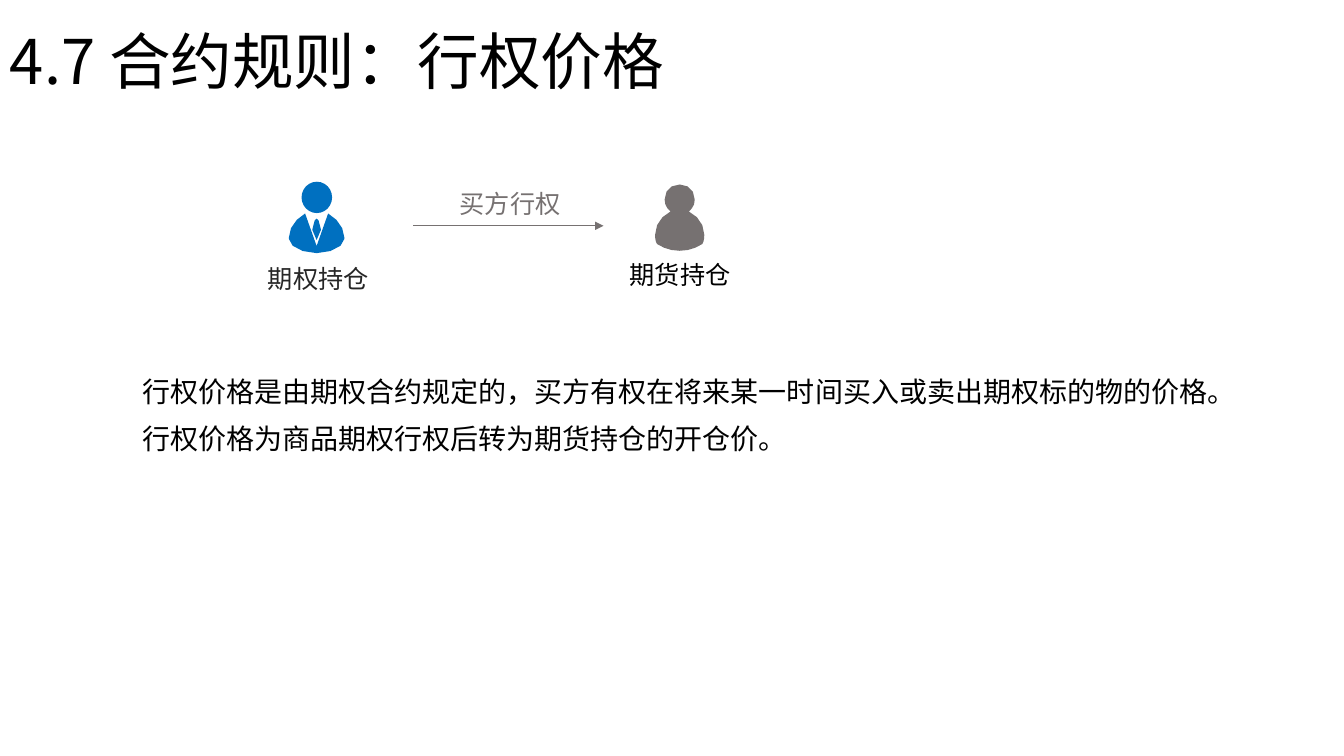
from dataclasses import dataclass
from lxml.etree import SubElement
from pptx import Presentation
from pptx.dml.color import RGBColor as RGB
from pptx.enum.shapes import MSO_CONNECTOR as CONN, MSO_SHAPE as SHAPE
from pptx.enum.text import PP_ALIGN as ALIGN
from pptx.oxml.ns import qn
from pptx.util import Cm, Pt


@dataclass(frozen=True)
class Theme:
    sans: str = "Noto Sans CJK SC"
    latin: str = "Calibri"
    black: RGB = RGB(0, 0, 0)
    dark: RGB = RGB(0x26, 0x26, 0x26)
    gray: RGB = RGB(0x76, 0x71, 0x71)
    blue: RGB = RGB(0x00, 0x70, 0xC0)
    title: Pt = Pt(44)
    body: Pt = Pt(20)
    label: Pt = Pt(18)


T = Theme()
STEPS = 3  # straight pieces per curve


def add_text(shapes, box, lines, size, color, font, wrap=True):
    """Text box with one paragraph per line; box is in centimetres."""
    tf = shapes.add_textbox(*map(Cm, box)).text_frame
    tf.word_wrap = wrap
    for i, line in enumerate(lines):
        p = tf.add_paragraph() if i else tf.paragraphs[0]
        p.add_run().text = line
        p.font.size, p.font.name, p.font.color.rgb = size, font, color
    return tf


def add_symmetric(shapes, axis, half):
    """Outline mirrored about x = axis; half lists points and cubic curves."""
    points = [half[0]]
    for seg in half[1:]:
        if len(seg) == 2:
            points.append(seg)
            continue
        x0, y0 = points[-1]
        x1, y1, x2, y2, x3, y3 = seg
        for t in (n / STEPS for n in range(1, STEPS + 1)):
            a, b, c, d = (1 - t) ** 3, 3 * t * (1 - t) ** 2, 3 * t * t * (1 - t), t ** 3
            points.append((a * x0 + b * x1 + c * x2 + d * x3,
                           a * y0 + b * y1 + c * y2 + d * y3))
    points += [(-x, y) for x, y in points[-2:0:-1]]
    outline = [(Cm(axis + x), Cm(y)) for x, y in points]
    fb = shapes.build_freeform(*outline[0])
    fb.add_line_segments(outline[1:], close=True)
    return fb.convert_to_shape()


prs = Presentation()
prs.slide_width, prs.slide_height = Cm(33.87), Cm(19.05)
s = prs.slides.add_slide(prs.slide_layouts[6])

# Body
tf = add_text(s.shapes, (3.33, 9.3, 27.43, 5.54), [
    "行权价格是由期权合约规定的，买方有权在将来某一时间买入或卖出期权标的物的价格。",
    "行权价格为商品期权行权后转为期货持仓的开仓价。",
], T.body, T.black, T.sans)
for p in tf.paragraphs:
    p.space_before = Pt(10)

# Title
tf = add_text(s.shapes, (0, 0.66, 28.55, 1.96), ["4.7 合约规则："], T.title, T.black, T.sans)
p = tf.paragraphs[0]
p.line_spacing = 0.9
r = p.add_run()
r.text = "行权价格"
r.font.name = T.latin

# Option holder: head, suit, tie
option = s.shapes.add_group_shape().shapes
suit = [(0, 6.2), (0.29, 5.38), (0.52, 5.51, 0.7, 5.74, 0.7, 5.99), (0.7, 6.02),
        (0.7, 6.2, 0.38, 6.38, 0, 6.38)]
tie = [(0, 5.51), (0.05, 5.56), (0.11, 5.79), (0, 6.05)]
head = option.add_shape(SHAPE.OVAL, Cm(7.6), Cm(4.58), Cm(0.77), Cm(0.79))
holder = [head] + [add_symmetric(option, 7.98, part) for part in (suit, tie)]
add_text(option, (6.5, 6.5, 3.07, 1.02), ["期权持仓"], T.label, T.dark, T.latin, wrap=False)

# Futures holder
futures = s.shapes.add_group_shape().shapes
person = [(0, 4.65), (0.22, 4.65, 0.38, 4.8, 0.38, 5.03), (0.38, 5.16, 0.32, 5.26, 0.23, 5.33),
          (0.46, 5.44, 0.62, 5.66, 0.62, 5.92), (0.62, 6, 0.61, 6.1, 0.57, 6.15),
          (0.4, 6.26, 0.22, 6.32, 0, 6.32)]
futures_person = add_symmetric(futures, 17.13, person)
add_text(futures, (15.62, 6.4, 3.07, 1.02), ["期货持仓"], T.label, T.black, T.latin, wrap=False)

# Figure colours
for sp in holder + [futures_person]:
    sp.shadow.inherit = False
    sp.fill.solid()
    sp.fill.fore_color.rgb = T.blue if sp in holder else T.gray
    sp.line.fill.background()

# Exercise arrow
arrow = s.shapes.add_connector(CONN.STRAIGHT, Cm(10.41), Cm(5.69), Cm(15.21), Cm(5.69))
arrow.line.color.rgb = T.gray
arrow.line.width = Pt(0.5)
SubElement(arrow.line._get_or_add_ln(), qn("a:tailEnd"), type="triangle")
SubElement(arrow._element.spPr, qn("a:effectLst"))
tf = add_text(s.shapes, (11.13, 4.62, 3.45, 1.02), ["买方行权"], T.label, T.gray, T.latin)
tf.paragraphs[0].alignment = ALIGN.CENTER

prs.save("out.pptx")
